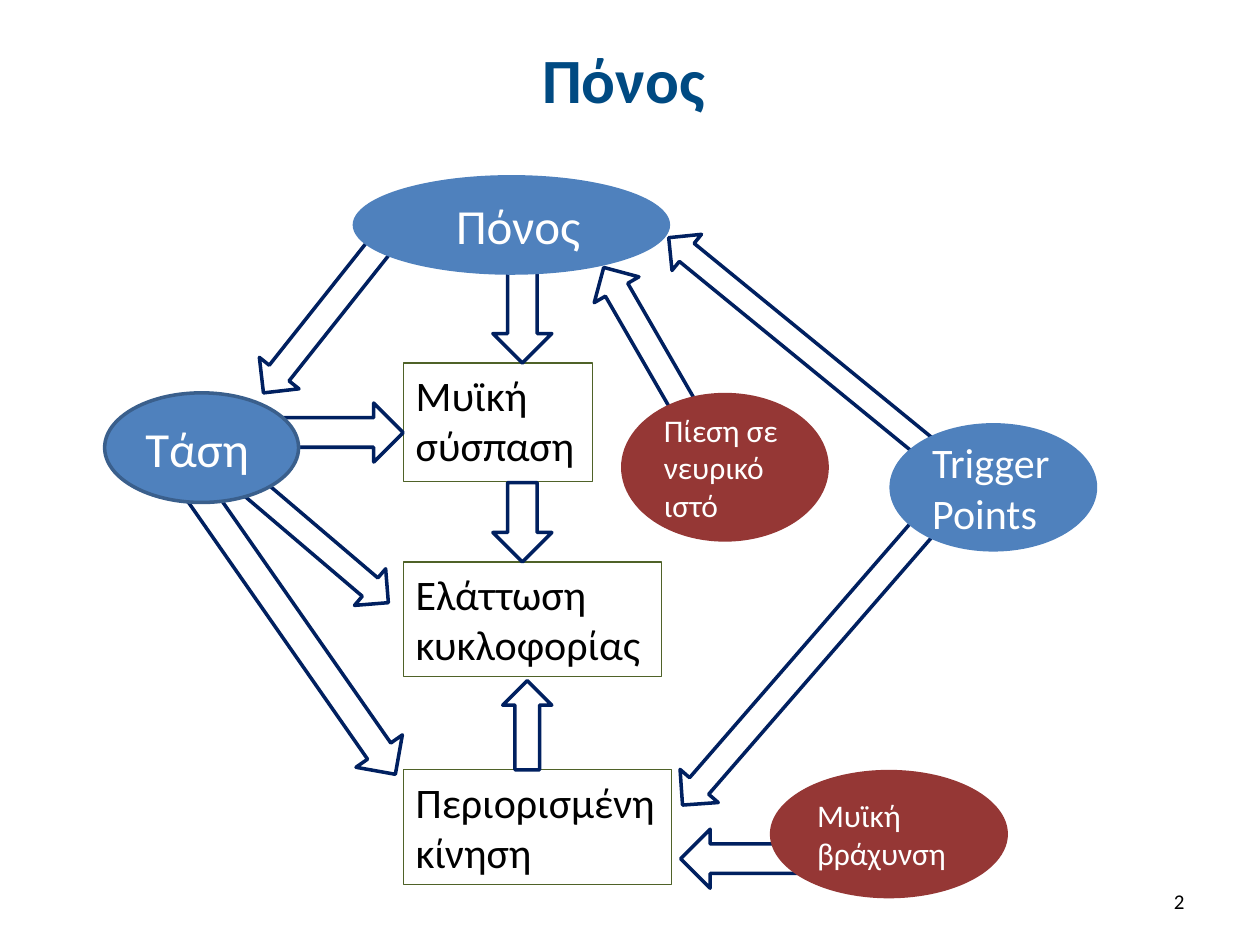
"""Build a slide that maps the causes and effects of pain."""
import math

import pptx
import pptx.dml.color
import pptx.enum.shapes
import pptx.enum.text
import pptx.util

Cm, Pt = pptx.util.Cm, pptx.util.Pt
SHAPE = pptx.enum.shapes.MSO_SHAPE
ANCHOR = pptx.enum.text.MSO_ANCHOR
ALIGN = pptx.enum.text.PP_ALIGN

FONT = "Calibri"
BLUE, RED, NAVY, GREEN = "4F81BD", "953735", "002060", "4F6228"
BLACK, WHITE = "000000", "FFFFFF"

TITLE = ("Πόνος", (1.14, 0.33, 22.86, 2.51))
NUMBER = ("2", (18.21, 17.65, 5.92, 1.02))

EFFECT_LEFT = 8.13
EFFECTS = [  # text, top, width, height
    ("Μυϊκή σύσπαση", 7.32, 3.81, 2.39),
    ("Ελάττωση κυκλοφορίας", 11.33, 5.21, 2.31),
    ("Περιορισμένη κίνηση", 15.52, 5.41, 2.31),
]

CAUSES = [  # text, place, fill, outline, size, indent
    ("Πόνος", (7.11, 3.53, 6.4, 2.01), BLUE, None, 28, 0.9),
    ("Trigger Points", (17.93, 8.53, 4.19, 2.59), BLUE, None, 24, 0),
    ("Πίεση σε νευρικό ιστό", (12.52, 7.92, 4.19, 3), RED, None, 18, 0),
    ("Μυϊκή βράχυνση", (15.52, 15.52, 4.8, 2.59), RED, None, 18, 0),
    ("Τάση", (2.11, 7.92, 3.91, 2.21), BLUE, "3A5F8C", 28, 0),
]

ARROWS = [  # tail, tip, thickness
    ((10.53, 5.11), (10.53, 7.32), 1.19),
    ((10.53, 9.73), (10.53, 11.33), 1.19),
    ((10.63, 15.52), (10.63, 13.72), 0.99),
    ((16.71, 17.31), (13.72, 17.31), 1.19),
    ((5.13, 8.72), (8.13, 8.72), 1.19),
    ((7.92, 4.63), (5.31, 7.92), 1.02),
    ((3.96, 9.86), (7.97, 15.61), 1.14),
    ((4.95, 9.7), (7.83, 12.15), 0.97),
    ((14.05, 8.65), (12.17, 5.39), 1.04),
    ((20.2, 8.81), (13.76, 16.23), 1.02),
    ((18.83, 9.16), (13.48, 4.79), 0.94),
]


def paint(target, color):
    """Give a font, line or fill a solid hex colour."""
    fill = getattr(target, "fill", target)
    fill.solid()
    fill.fore_color.rgb = pptx.dml.color.RGBColor.from_string(color)


def write(box, text, size, color, align=ALIGN.LEFT, anchor=ANCHOR.MIDDLE, bold=False):
    """Put one formatted run in a box."""
    frame = box.text_frame
    frame.word_wrap = True
    frame.vertical_anchor = anchor
    para = frame.paragraphs[0]
    para.alignment = align
    span = para.add_run()
    span.text = text
    span.font.name = FONT
    span.font.size = Pt(size)
    span.font.bold = bold
    paint(span.font, color)


def add_shape(page, kind, place, fill=None, outline=None, weight=2):
    """Add a flat preset shape with an optional fill and outline."""
    shape = page.shapes.add_shape(kind, *map(Cm, place))
    shape.shadow.inherit = False
    for part, color in ((shape.fill, fill), (shape.line, outline)):
        if color:
            paint(part, color)
        else:
            getattr(part, "fill", part).background()
    if outline:
        shape.line.width = Pt(weight)
    return shape


def add_arrow(page, tail, tip, thickness):
    """Add a block arrow that runs from tail to tip."""
    length = math.dist(tail, tip)
    left = (tail[0] + tip[0] - length) / 2
    top = (tail[1] + tip[1] - thickness) / 2
    place = (left, top, length, thickness)
    arrow = add_shape(page, SHAPE.RIGHT_ARROW, place, outline=NAVY)
    angle = math.degrees(math.atan2(tip[1] - tail[1], tip[0] - tail[0]))
    arrow.rotation = angle % 360


def main():
    """Build and save the deck."""
    deck = pptx.Presentation()
    deck.slide_width, deck.slide_height = Cm(25.4), Cm(19.05)
    page = deck.slides.add_slide(deck.slide_layouts.get_by_name("Title Only"))

    text, place = TITLE
    title = page.shapes.title
    title.left, title.top, title.width, title.height = map(Cm, place)
    write(title, text, 36, "004A82", ALIGN.CENTER, bold=True)

    text, place = NUMBER
    number = page.shapes.add_textbox(*map(Cm, place))
    write(number, text, 12, BLACK, ALIGN.RIGHT)

    for text, top, width, height in EFFECTS:
        place = (EFFECT_LEFT, top, width, height)
        box = add_shape(page, SHAPE.RECTANGLE, place, outline=GREEN, weight=0.75)
        write(box, text, 24, BLACK, anchor=ANCHOR.TOP)

    for tail, tip, thickness in ARROWS:
        add_arrow(page, tail, tip, thickness)

    for text, place, fill, outline, size, indent in CAUSES:
        oval = add_shape(page, SHAPE.OVAL, place, fill, outline)
        write(oval, text, size, WHITE)
        oval.text_frame.margin_left = Cm(0.25 + indent)

    deck.save("out.pptx")


if __name__ == "__main__":
    main()
